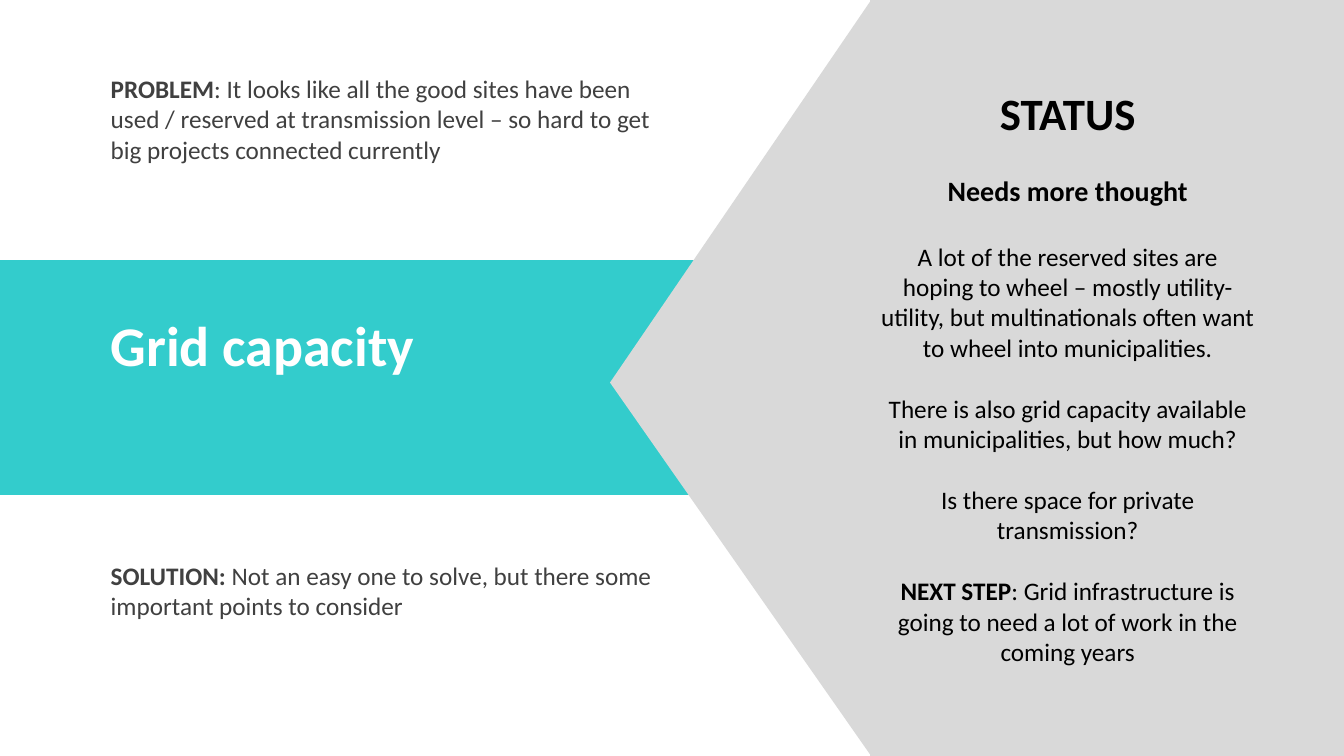
import pptx
import pptx.util
import pptx.dml.color
import pptx.enum.shapes
import pptx.enum.text

Inches = pptx.util.Inches
Pt = pptx.util.Pt
SHAPES = pptx.enum.shapes.MSO_SHAPE
ALIGN = pptx.enum.text.PP_ALIGN

COLOURS = {"band": "33CCCC", "panel": "D9D9D9", "title": "FFFFFF",
           "body": "404040", "status": "000000"}
FONT = "Calibri"
SLIDE_WIDTH, SLIDE_HEIGHT = 13.33, 7.5


def colour(name):
    return pptx.dml.color.RGBColor.from_string(COLOURS[name])


def add_block(page, kind, box, fill):
    block = page.shapes.add_shape(kind, *map(Inches, box))
    block.shadow.inherit = False
    block.fill.solid()
    block.fill.fore_color.rgb = colour(fill)
    block.line.fill.background()
    return block


def add_text(page, box, paragraphs, ink, align=ALIGN.LEFT, wrap=True):
    """Each paragraph is (size, space before, [(text, bold), ...])."""
    frame = page.shapes.add_textbox(*map(Inches, box)).text_frame
    frame.word_wrap = wrap
    for index, (size, gap, spans) in enumerate(paragraphs):
        para = frame.paragraphs[0] if index == 0 else frame.add_paragraph()
        para.alignment = align
        para.space_before = Pt(gap)
        for text, bold in spans:
            span = para.add_run()
            span.text = text
            span.font.name = FONT
            span.font.size = Pt(size)
            span.font.bold = bold
            span.font.color.rgb = colour(ink)


def add_title_band(page, box):
    left, top, width, height = box
    add_block(page, SHAPES.RECTANGLE, box, "band")
    add_text(page, (left + 1, top + 0.45, 3.25, 0.77),
             [(40, 0, [("Grid capacity", True)])], "title", wrap=False)


def add_statement(page, box, label, text):
    add_text(page, box, [(18, 0, [(label, True), (text, False)])], "body")


def add_status_panel(page, box):
    left, top, width, height = box
    point = 2.59  # how far the arrow point reaches out of the slab

    # Grey slab with a point towards the title
    add_block(page, SHAPES.RECTANGLE,
              (left + point - 0.01, top, width - point + 0.01, height), "panel")
    arrow = add_block(page, SHAPES.ISOSCELES_TRIANGLE,
                      (left + (point - height) / 2, top + (height - point) / 2,
                       height, point), "panel")
    arrow.rotation = 270
    arrow.adjustments[0] = 0.494

    # Status text
    paragraphs = [
        (32, 0, [("STATUS", True)]),
        (20, 24.4, [("Needs more thought", True)]),
        (18, 24.4, [("A lot of the reserved sites are hoping to wheel – mostly "
                     "utility-utility, but multinationals often want to wheel "
                     "into municipalities.", False)]),
        (18, 22, [("There is also grid capacity available in municipalities, "
                   "but how much?", False)]),
        (18, 22, [("Is there space for private transmission?", False)]),
        (18, 22, [("NEXT STEP", True),
                  (": Grid infrastructure is going to need a lot of work in "
                   "the coming years", False)]),
    ]
    add_text(page, (left + point, top + 0.8, 3.9, height - 1.6),
             paragraphs, "status", ALIGN.CENTER)


def main():
    deck = pptx.Presentation()
    deck.slide_width = Inches(SLIDE_WIDTH)
    deck.slide_height = Inches(SLIDE_HEIGHT)
    page = deck.slides.add_slide(deck.slide_layouts[6])

    add_title_band(page, (0, 2.58, SLIDE_WIDTH, 2.33))
    add_statement(page, (1, 0.68, 5.77, 1.01), "PROBLEM",
                  ": It looks like all the good sites have been used / reserved "
                  "at transmission level – so hard to get big projects "
                  "connected currently")
    add_statement(page, (1, 5.51, 5.77, 0.71), "SOLUTION: ",
                  "Not an easy one to solve, but there some important points "
                  "to consider")
    add_status_panel(page, (6.05, 0, SLIDE_WIDTH - 6.05, SLIDE_HEIGHT))

    deck.save("out.pptx")


if __name__ == "__main__":
    main()
